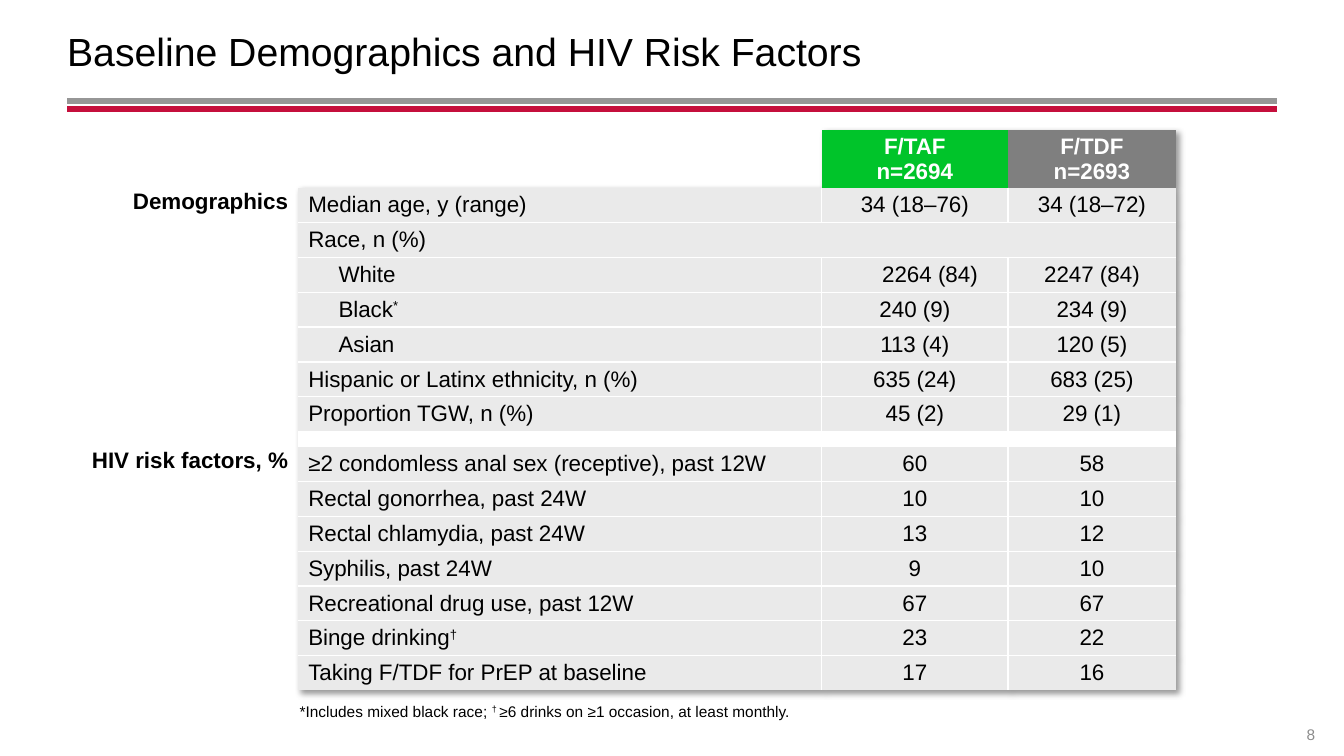
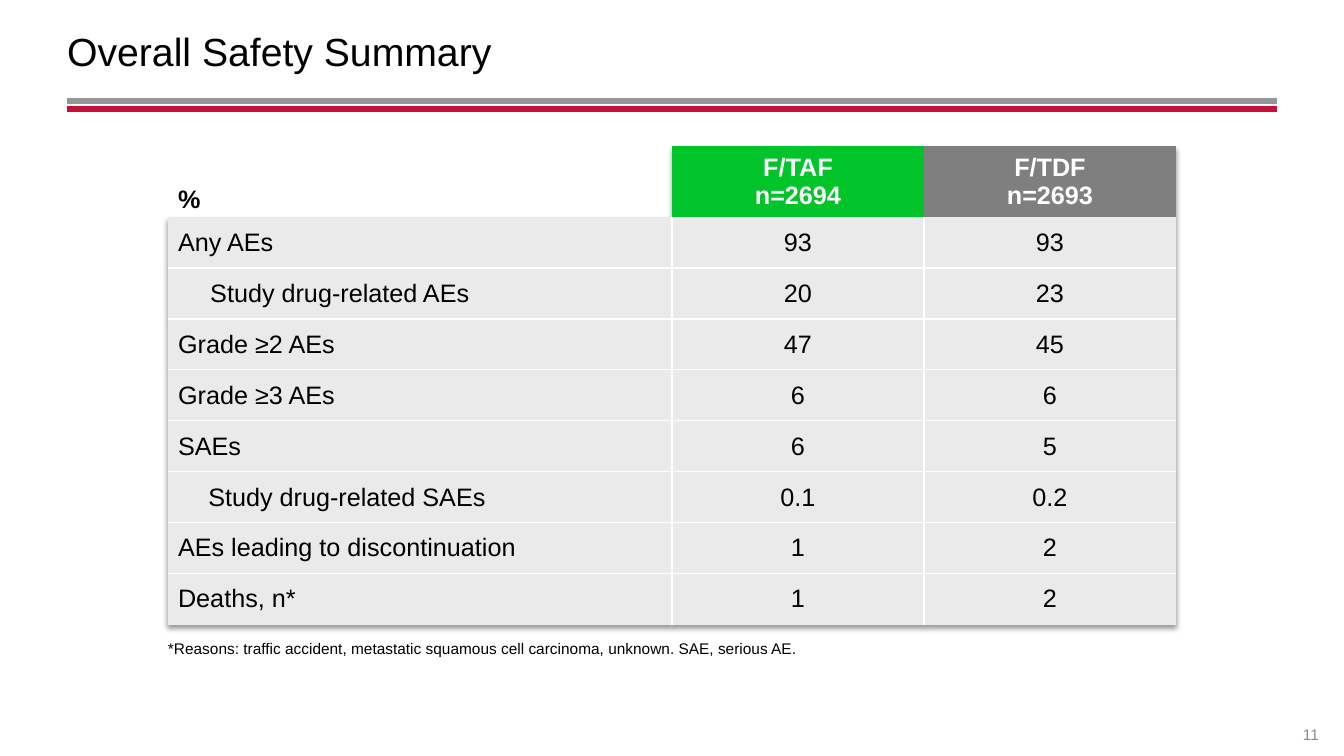
from dataclasses import dataclass

from lxml.etree import SubElement
from pptx import Presentation
from pptx.dml.color import RGBColor
from pptx.enum.shapes import MSO_CONNECTOR
from pptx.enum.text import MSO_ANCHOR as Anchor, PP_ALIGN as Align
from pptx.oxml.ns import qn
from pptx.util import Pt

# Theme
FONT = "Arial"
BLACK = RGBColor(0x00, 0x00, 0x00)
WHITE = RGBColor(0xFF, 0xFF, 0xFF)
GREEN = RGBColor(0x00, 0xC4, 0x2A)
GRAY = RGBColor(0x7F, 0x7F, 0x7F)
CELL_GRAY = RGBColor(0xEA, 0xEA, 0xEA)
RULE_GRAY = RGBColor(0x96, 0x96, 0x96)
RULE_RED = RGBColor(0xC5, 0x0F, 0x3C)
NUMBER_GRAY = RGBColor(0x8C, 0x8C, 0x8C)
PLAIN_TABLE_STYLE = "{2D5ABB26-0587-4C30-8999-92F81FD0307C}"

ARMS = [("F/TAF\nn=2694", GREEN), ("F/TDF\nn=2693", GRAY)]


@dataclass
class Row:
    label: str
    taf: str = ""
    tdf: str = ""
    indent: float = 0
    taf_indent: float = 0


GAP = None  # white row between two blocks of the table

DEMOGRAPHICS = [
    Row("Median age, y (range)", "34 (18–76)", "34 (18–72)"),
    Row("Race, n (%)"),
    Row("White", "2264 (84)", "2247 (84)", 21.6, 21.6),
    Row("Black^*", "240 (9)", "234 (9)", 21.6),
    Row("Asian", "113 (4)", "120 (5)", 21.6),
    Row("Hispanic or Latinx ethnicity, n (%)", "635 (24)", "683 (25)"),
    Row("Proportion TGW, n (%)", "45 (2)", "29 (1)"),
    GAP,
    Row("≥2 condomless anal sex (receptive), past 12W", "60", "58"),
    Row("Rectal gonorrhea, past 24W", "10", "10"),
    Row("Rectal chlamydia, past 24W", "13", "12"),
    Row("Syphilis, past 24W", "9", "10"),
    Row("Recreational drug use, past 12W", "67", "67"),
    Row("Binge drinking^†", "23", "22"),
    Row("Taking F/TDF for PrEP at baseline", "17", "16"),
]

SAFETY = [
    Row("Any AEs", "93", "93"),
    Row("Study drug-related AEs", "20", "23", 23),
    Row("Grade ≥2 AEs", "47", "45"),
    Row("Grade ≥3 AEs", "6", "6"),
    Row("SAEs", "6", "5"),
    Row("Study drug-related SAEs", "0.1", "0.2", 21.6),
    Row("AEs leading to discontinuation", "1", "2"),
    Row("Deaths, n*", "1", "2"),
]


# Text
def write(frame, text, size, color=BLACK, bold=False, align=Align.LEFT, indent=0):
    """Newlines split paragraphs; a caret switches superscript on and off."""
    for index, line in enumerate(text.split("\n")):
        paragraph = frame.add_paragraph() if index else frame.paragraphs[0]
        paragraph.alignment = align
        if indent:
            paragraph._p.get_or_add_pPr().set("marL", str(Pt(indent)))
        for part, content in enumerate(line.split("^")):
            run = paragraph.add_run()
            run.text = content
            run.font.name = FONT
            run.font.size = Pt(size)
            run.font.bold = bold
            run.font.color.rgb = color
            if part % 2:
                run._r.get_or_add_rPr().set("baseline", "30000")


def add_text(slide, box, text, size, color=BLACK, side_inset=0.0,
             anchor=Anchor.BOTTOM, align=Align.LEFT):
    frame = slide.shapes.add_textbox(*map(Pt, box)).text_frame
    frame.word_wrap = True
    frame.vertical_anchor = anchor
    frame.margin_left = frame.margin_right = Pt(side_inset)
    frame.margin_top = frame.margin_bottom = Pt(3.6)
    write(frame, text, size, color, align=align)


# Title, double rule and page number
def add_base_slide(presentation, title, number):
    slide = presentation.slides.add_slide(presentation.slide_layouts[6])
    for y, color in ((72, RULE_GRAY), (78, RULE_RED)):
        rule = slide.shapes.add_connector(
            MSO_CONNECTOR.STRAIGHT, Pt(48), Pt(y), Pt(912), Pt(y))
        rule.line.color.rgb = color
        rule.line.width = Pt(4.25)
        SubElement(rule._element.spPr, qn("a:effectLst"))
    add_text(slide, (48, 6.5, 864, 59), title, 28, anchor=Anchor.MIDDLE)
    add_text(slide, (921.6, 506, 29.5, 29), number, 11, NUMBER_GRAY, 7.2,
             align=Align.CENTER)
    return slide


# Table formatting
def add_borders(cell, sides):
    properties = cell._tc.get_or_add_tcPr()
    for side in "LRTB":
        if side in sides:
            line = SubElement(properties, qn(f"a:ln{side}"), w=str(Pt(1)))
            fill = SubElement(line, qn("a:solidFill"))
            SubElement(fill, qn("a:srgbClr"), val=str(WHITE))


def format_table(table, shadow_angle):
    properties = table._tbl.tblPr
    table.first_row = table.horz_banding = False
    style = properties.find(qn("a:tableStyleId"))
    style.text = PLAIN_TABLE_STYLE
    effects = SubElement(properties, qn("a:effectLst"))
    style.addprevious(effects)
    shadow = SubElement(effects, qn("a:outerShdw"), blurRad=str(Pt(4)),
                        dist=str(Pt(3)), dir=str(shadow_angle * 60000),
                        algn="tl", rotWithShape="0")
    color = SubElement(shadow, qn("a:srgbClr"), val=str(BLACK))
    SubElement(color, qn("a:alpha"), val="40000")


def fill_cell(cell, color):
    cell.fill.solid()
    cell.fill.fore_color.rgb = color


def fill_body_row(table, number, rows, label_column, size):
    row = rows[number]
    cells = [table.cell(number + 1, label_column + i) for i in range(3)]
    if row is GAP:
        for cell in cells:
            fill_cell(cell, WHITE)
        return
    inner = "T" if number and rows[number - 1] is not GAP else ""
    if number + 1 < len(rows) and rows[number + 1] is not GAP:
        inner += "B"
    values = ((row.label, Align.LEFT, row.indent),
              (row.taf, Align.CENTER, row.taf_indent),
              (row.tdf, Align.CENTER, 0))
    for cell, (text, align, indent), sides in zip(cells, values, ("R", "LR", "L")):
        add_borders(cell, inner + (sides if row.taf else ""))
        fill_cell(cell, CELL_GRAY)
        if text:
            write(cell.text_frame, text, size, align=align, indent=indent)


def add_arm_table(slide, left, top, widths, heights, rows, size, inset,
                  shadow_angle, corner="", side_labels=()):
    """Heights are those of the header, a body row and a gap row."""
    header_height, row_height, gap_height = heights
    row_heights = [header_height] + [
        gap_height if row is GAP else row_height for row in rows]
    table = slide.shapes.add_table(
        len(row_heights), len(widths), Pt(left), Pt(top),
        Pt(sum(widths)), Pt(sum(row_heights))).table
    format_table(table, shadow_angle)
    for column, width in zip(table.columns, widths):
        column.width = Pt(width)
    for table_row, height in zip(table.rows, row_heights):
        table_row.height = Pt(height)
    for cell in table.iter_cells():
        cell.margin_left = cell.margin_right = Pt(7.2)
        cell.margin_top = cell.margin_bottom = Pt(inset)
        cell.vertical_anchor = Anchor.MIDDLE

    # Header
    label_column = len(widths) - 3
    if corner:
        cell = table.cell(0, label_column)
        cell.vertical_anchor = Anchor.BOTTOM
        write(cell.text_frame, corner, size, bold=True)
    for column, (name, color) in enumerate(ARMS, label_column + 1):
        cell = table.cell(0, column)
        fill_cell(cell, color)
        write(cell.text_frame, name, size, WHITE, True, Align.CENTER)

    # Body and section names
    for number in range(len(rows)):
        fill_body_row(table, number, rows, label_column, size)
    for name, first, last in side_labels:
        cell = table.cell(first, 0)
        cell.merge(table.cell(last, 0))
        cell.vertical_anchor = Anchor.TOP
        write(cell.text_frame, name, size, bold=True, align=Align.RIGHT)

    # Small type keeps empty cells from stretching their rows
    for cell in table.iter_cells():
        if not cell.text_frame.text:
            SubElement(cell.text_frame.paragraphs[0]._p, qn("a:endParaRPr"), sz="600")


# Slides
def add_demographics_slide(presentation):
    slide = add_base_slide(
        presentation, "Baseline Demographics and HIV Risk Factors", "8")
    add_arm_table(slide, 39.6, 92.9, (173.4, 374, 133, 120), (40.7, 24.9, 10.7),
                  DEMOGRAPHICS, 16, 1.4, 45,
                  side_labels=(("Demographics", 1, 6),
                               ("HIV risk factors, %", 9, 15)))
    add_text(slide, (214, 494, 628, 24),
             "*Includes mixed black race; ^† ^≥6 drinks on ≥1 occasion, "
             "at least monthly.", 11)


def add_safety_slide(presentation):
    slide = add_base_slide(presentation, "Overall Safety Summary", "11")
    add_arm_table(slide, 120, 104.4, (360, 180, 180), (50.6, 36.4, 0),
                  SAFETY, 18, 2.2, 90, corner="%")
    add_text(slide, (120, 449, 720, 24),
             "*Reasons: traffic accident, metastatic squamous cell carcinoma, "
             "unknown. SAE, serious AE.", 11)


def main():
    presentation = Presentation()
    presentation.slide_width = Pt(960)
    presentation.slide_height = Pt(540)
    add_demographics_slide(presentation)
    add_safety_slide(presentation)
    presentation.save("out.pptx")


if __name__ == "__main__":
    main()
